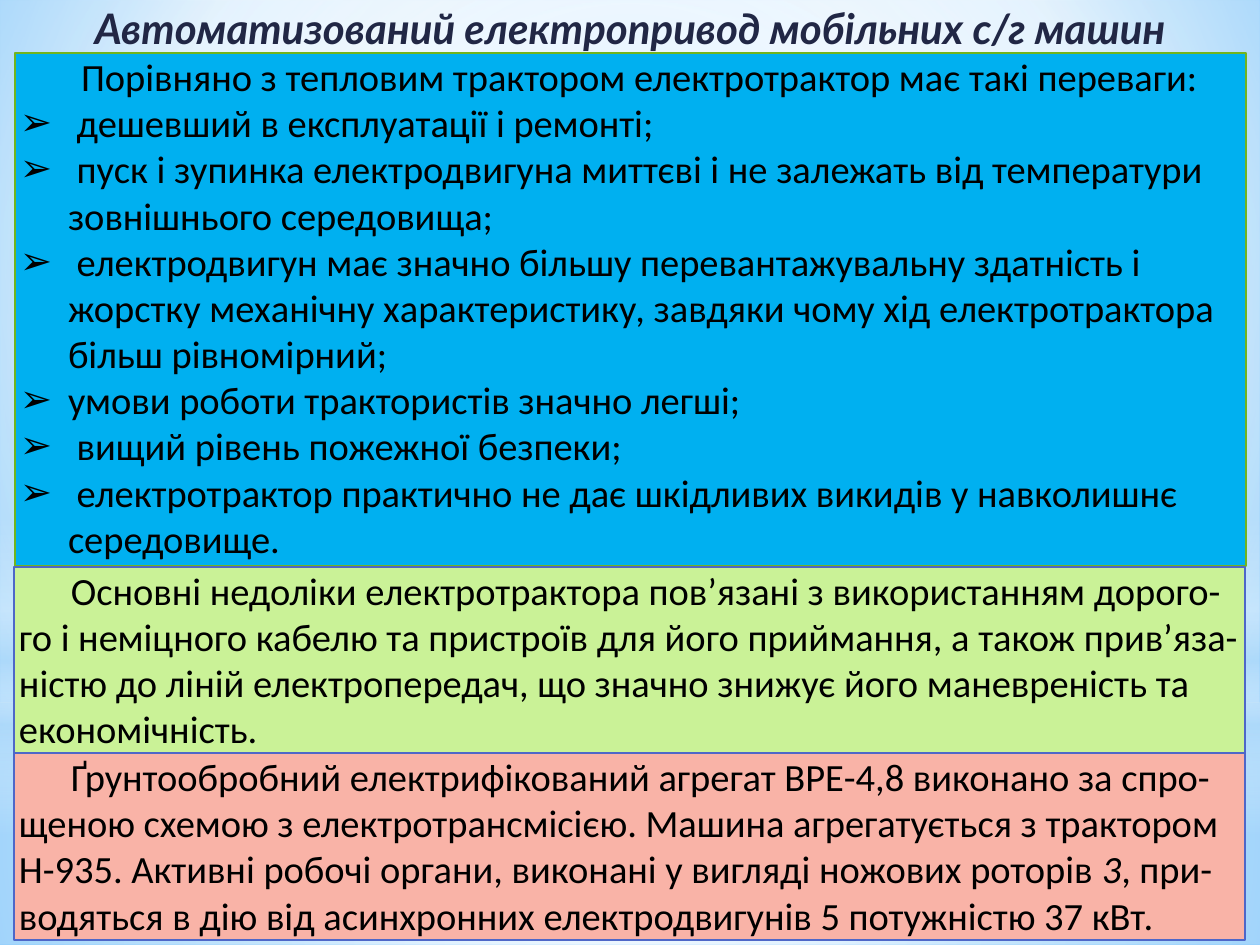
from dataclasses import dataclass

from lxml import etree
from pptx import Presentation
from pptx.dml.color import RGBColor
from pptx.enum.shapes import MSO_SHAPE
from pptx.enum.text import MSO_ANCHOR, MSO_AUTO_SIZE, PP_ALIGN
from pptx.oxml.ns import qn
from pptx.util import Pt

EMU_PER_PX = 914400 / 126
RECTANGLE, OVAL = MSO_SHAPE.RECTANGLE, MSO_SHAPE.OVAL
TOP, NO_AUTOFIT = MSO_ANCHOR.TOP, MSO_AUTO_SIZE.NONE
LEFT, CENTER = PP_ALIGN.LEFT, PP_ALIGN.CENTER

NAVY = RGBColor(0x21, 0x27, 0x45)
BLACK = RGBColor(0x00, 0x00, 0x00)
WHITE = RGBColor(0xFF, 0xFF, 0xFF)
PALE_BLUE = RGBColor(0xB4, 0xDC, 0xFA)
SKY = RGBColor(0x9E, 0xD5, 0xFF)
DEEP_SKY = RGBColor(0x5B, 0xB9, 0xFF)
CYAN = RGBColor(0x00, 0xB0, 0xF0)
GREEN = RGBColor(0x72, 0xB4, 0x1D)
LIME = RGBColor(0xCA, 0xF2, 0x97)
SALMON = RGBColor(0xF9, 0xB3, 0xA7)
INDIGO = RGBColor(0x4E, 0x67, 0xC8)


@dataclass(frozen=True)
class Frame:
    left: int
    top: int
    width: int
    height: int


@dataclass(frozen=True)
class Stop:
    position: int
    color: RGBColor
    opacity: int = 100


@dataclass(frozen=True)
class Veil:
    shape: MSO_SHAPE
    frame: Frame
    stops: tuple[Stop, ...]
    radial: bool = True


@dataclass(frozen=True)
class Span:
    text: str
    italic: bool = False


@dataclass(frozen=True)
class Panel:
    frame: Frame
    fill: RGBColor
    line: RGBColor


CENTRE = (50, 50, 50, 50)
VEILS = (
    Veil(RECTANGLE, Frame(0, 703, 1260, 242),
         (Stop(0, WHITE, 91), Stop(37, WHITE, 76), Stop(100, PALE_BLUE, 79))),
    Veil(RECTANGLE, Frame(0, 0, 1260, 703),
         (Stop(0, WHITE, 89), Stop(48, WHITE, 62), Stop(100, PALE_BLUE, 79))),
    Veil(RECTANGLE, Frame(0, 519, 1260, 315),
         (Stop(0, WHITE, 0), Stop(29, WHITE, 30), Stop(45, PALE_BLUE, 40),
          Stop(55, WHITE, 26), Stop(65, PALE_BLUE, 60), Stop(100, WHITE, 0)), False),
    Veil(OVAL, Frame(0, 221, 1260, 703), (Stop(0, WHITE), Stop(56, WHITE, 0))),
)

TITLE = "Автоматизований електропривод мобільних с/г машин"
INTRO = "Порівняно з тепловим трактором електротрактор має такі переваги:"
ADVANTAGES = (
    " дешевший в експлуатації і ремонті;",
    " пуск і зупинка електродвигуна миттєві і не залежать від температури "
    "зовнішнього середовища;",
    " електродвигун має значно більшу перевантажувальну здатність і жорстку механічну "
    "характеристику, завдяки чому хід електротрактора більш рівномірний;",
    "умови роботи трактористів значно легші;",
    " вищий рівень пожежної безпеки;",
    " електротрактор практично не дає шкідливих викидів у навколишнє середовище.",
)
ADVANTAGES_PANEL = Panel(Frame(15, 53, 1231, 513), CYAN, GREEN)
NOTES = (
    (Panel(Frame(14, 567, 1231, 186), LIME, INDIGO), (
        Span("Основні недоліки електротрактора пов’язані з використанням дорого-го і "
             "неміцного кабелю та пристроїв для його приймання, а також прив’яза-ністю до "
             "ліній електропередач, що значно знижує його маневреність та економічність."),
    )),
    (Panel(Frame(14, 753, 1231, 187), SALMON, INDIGO), (
        Span("Ґрунтообробний електрифікований агрегат ВРЕ-4,8 виконано за спро-щеною схемою "
             "з електротрансмісією. Машина агрегатується з трактором Ь-935. Активні робочі "
             "органи, виконані у вигляді ножових роторів ".replace("Ь-935", "Н-935")),
        Span("3", italic=True),
        Span(", при-водяться в дію від асинхронних електродвигунів 5 потужністю 37 кВт."),
    )),
)


def px(length: int) -> int:
    return round(length * EMU_PER_PX)


def place(box, frame: Frame) -> None:
    box.left, box.top = px(frame.left), px(frame.top)
    box.width, box.height = px(frame.width), px(frame.height)


def add_shape(page, kind: MSO_SHAPE, frame: Frame):
    box = page.shapes.add_shape(kind, 0, 0, 0, 0)
    place(box, frame)
    box.shadow.inherit = False
    return box


def set_gradient(fill, element, stops: tuple[Stop, ...], focus=None) -> None:
    """Fill with a circular gradient around focus, or a vertical one without it."""
    fill.gradient()
    gradient = element.find(".//" + qn("a:gradFill"))
    for child in list(gradient):
        gradient.remove(child)
    stop_list = etree.SubElement(gradient, qn("a:gsLst"))
    for stop in stops:
        item = etree.SubElement(stop_list, qn("a:gs"), pos=str(stop.position * 1000))
        color = etree.SubElement(item, qn("a:srgbClr"), val=str(stop.color))
        etree.SubElement(color, qn("a:alpha"), val=str(stop.opacity * 1000))
    if focus is None:
        etree.SubElement(gradient, qn("a:lin"), ang="5400000", scaled="0")
        return
    circle = etree.SubElement(gradient, qn("a:path"), path="circle")
    sides = {side: str(share * 1000) for side, share in zip("ltrb", focus)}
    etree.SubElement(circle, qn("a:fillToRect"), **sides)


def draw_veil(page, veil: Veil) -> None:
    box = add_shape(page, veil.shape, veil.frame)
    set_gradient(box.fill, box._element, veil.stops, CENTRE if veil.radial else None)
    box.line.fill.background()


def prepare_text(box, side_margin: int):
    text = box.text_frame
    text.word_wrap, text.auto_size, text.vertical_anchor = True, NO_AUTOFIT, TOP
    text.margin_left = text.margin_right = px(side_margin)
    text.margin_top = text.margin_bottom = 0
    return text


def style_panel(box, panel: Panel):
    place(box, panel.frame)
    box.fill.solid()
    box.fill.fore_color.rgb = panel.fill
    box.line.color.rgb = panel.line
    box.line.width = Pt(1.25)
    return prepare_text(box, 5)


def write(para, spans: tuple[Span, ...], margin: int, indent: int, bullet: str = "") -> None:
    para.alignment = LEFT
    para.space_before = Pt(0)
    properties = para._p.get_or_add_pPr()
    properties.set("marL", str(px(margin)))
    properties.set("indent", str(px(indent)))
    if bullet:
        etree.SubElement(properties, qn("a:buChar"), char=bullet)
    else:
        etree.SubElement(properties, qn("a:buNone"))
    for part in spans:
        span = para.add_run()
        span.text = part.text
        span.font.name, span.font.size = "Calibri", Pt(22)
        span.font.color.rgb, span.font.italic = BLACK, part.italic


def write_title(title) -> None:
    place(title, Frame(15, 10, 1230, 43))
    para = prepare_text(title, 0).paragraphs[0]
    para.alignment, para.line_spacing = CENTER, 0.85
    span = para.add_run()
    span.text = TITLE
    span.font.name, span.font.size, span.font.color.rgb = "Lato", Pt(24), NAVY
    span.font.bold = span.font.italic = span.font.underline = True


def main() -> None:
    deck = Presentation()
    deck.slide_width, deck.slide_height = px(1260), px(945)
    page = deck.slides.add_slide(deck.slide_layouts[1])
    title, body = page.placeholders
    set_gradient(page.background.fill, page._element,
                 (Stop(0, SKY), Stop(60, WHITE), Stop(100, DEEP_SKY)), (20, 10, 20, 60))
    for veil in VEILS:
        draw_veil(page, veil)
    for box in (title, body):
        page.shapes._spTree.append(box._element)  # bring in front of the veils

    write_title(title)
    text = style_panel(body, ADVANTAGES_PANEL)
    write(text.paragraphs[0], (Span(INTRO),), 0, 61)
    for advantage in ADVANTAGES:
        write(text.add_paragraph(), (Span(advantage),), 48, -48, "➢")
    for panel, spans in NOTES:
        text = style_panel(add_shape(page, RECTANGLE, panel.frame), panel)
        write(text.paragraphs[0], spans, 0, 52)
    deck.save("out.pptx")


if __name__ == "__main__":
    main()
